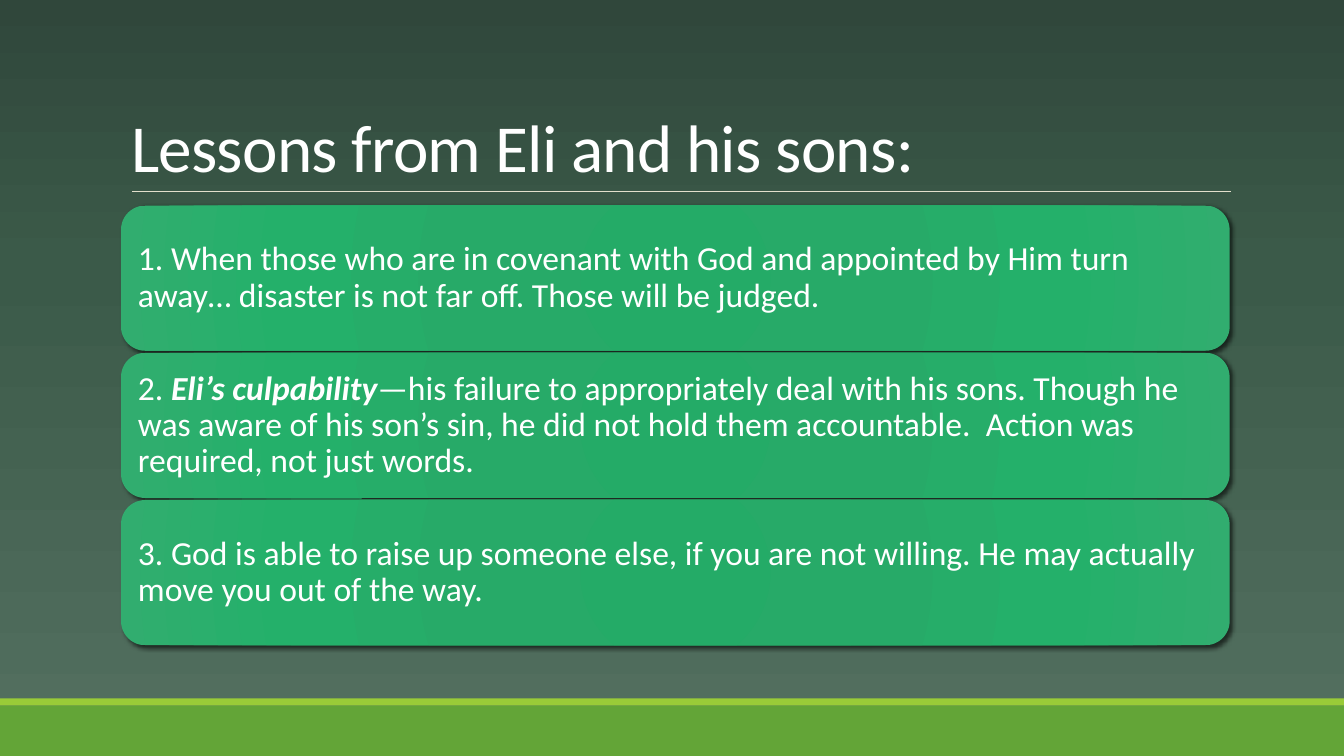
from lxml import etree
from pptx import Presentation
from pptx.dml.color import RGBColor
from pptx.enum.shapes import MSO_CONNECTOR, MSO_SHAPE
from pptx.enum.text import MSO_ANCHOR, MSO_AUTO_SIZE, PP_ALIGN
from pptx.oxml.ns import qn
from pptx.util import Cm, Pt

BAR, CARD = MSO_SHAPE.RECTANGLE, MSO_SHAPE.ROUNDED_RECTANGLE
STRAIGHT = MSO_CONNECTOR.STRAIGHT
MIDDLE, BOTTOM = MSO_ANCHOR.MIDDLE, MSO_ANCHOR.BOTTOM
LEFT, NO_FIT = PP_ALIGN.LEFT, MSO_AUTO_SIZE.NONE

WHITE = RGBColor(0xFF, 0xFF, 0xFF)
BLACK = RGBColor(0x00, 0x00, 0x00)
CREAM = RGBColor(0xE2, 0xDF, 0xCC)
LIME = RGBColor(0x99, 0xCB, 0x38)
GRASS = RGBColor(0x63, 0xA5, 0x37)
BACKDROP = [(0, RGBColor(0x54, 0x70, 0x60)), (65, RGBColor(0x3B, 0x5A, 0x49)),
            (100, RGBColor(0x30, 0x47, 0x3B))]
EMERALD = [(0, RGBColor(0x24, 0xAB, 0x67)), (34, RGBColor(0x27, 0xAA, 0x68)),
           (70, RGBColor(0x24, 0xB0, 0x6A)), (100, RGBColor(0x31, 0xAD, 0x6F))]

WIDTH, HEIGHT = 33.87, 19.05
CARD_LEFT, CARD_TOP, CARD_WIDTH, CARD_HEIGHT, CARD_PITCH = 3.05, 5.18, 27.94, 3.66, 3.71

LESSONS = [
    [("1. When those who are in covenant with God and appointed by Him turn away… "
      "disaster is not far off. Those will be judged.", False)],
    [("2. ", False), ("Eli’s culpability", True),
     ("—his failure to appropriately deal with his sons. Though he was aware of his "
      "son’s sin, he did not hold them accountable.  Action was required, "
      "not just words.", False)],
    [("3. God is able to raise up someone else, if you are not willing. "
      "He may actually move you out of the way.", False)],
]


def add_xml(parent, tag, **attributes):
    """Append a child element with the given attributes and return it."""
    values = {name: str(value) for name, value in attributes.items()}
    return etree.SubElement(parent, qn(tag), values)


class LessonSlide:
    """Holds the slide and its style, and adds each kind of element."""

    font = "Calibri"

    def __init__(self, deck):
        """Add a title-only slide to the deck."""
        self.slide = deck.slides.add_slide(deck.slide_layouts[5])

    def gradient(self, owner, stops):
        """Write the colour stops into the owner's gradient and return it."""
        gradient = next(owner.iter(qn("a:gradFill")))
        gradient.clear()
        stop_list = add_xml(gradient, "a:gsLst")
        for percent, color in stops:
            stop = add_xml(stop_list, "a:gs", pos=percent * 1000)
            add_xml(stop, "a:srgbClr", val=color)
        return gradient

    def background(self, stops):
        """Fill the background with a gradient rising from the bottom."""
        self.slide.background.fill.gradient()
        gradient = self.gradient(self.slide.element, stops)
        add_xml(gradient, "a:lin", ang=270 * 60000, scaled=0)

    def format_run(self, run, size, emphasis=False):
        """Apply the slide's font to a run."""
        run.font.name, run.font.size = self.font, Pt(size)
        run.font.color.rgb = WHITE
        run.font.bold = run.font.italic = emphasis

    def title(self, text, left, top, width, height):
        """Place and format the title placeholder."""
        heading = self.slide.shapes.title
        heading.left, heading.top = Cm(left), Cm(top)
        heading.width, heading.height = Cm(width), Cm(height)
        frame = heading.text_frame
        frame.text = text
        frame.auto_size, frame.vertical_anchor = NO_FIT, BOTTOM
        paragraph = frame.paragraphs[0]
        paragraph.alignment, paragraph.line_spacing = LEFT, 0.85
        run = paragraph.runs[0]
        self.format_run(run, 48)
        run.font._element.set("spc", "-50")

    def rule(self, left, right, y, color):
        """Draw a thin horizontal line."""
        line = self.slide.shapes.add_connector(STRAIGHT, Cm(left), Cm(y), Cm(right), Cm(y))
        line.line.color.rgb, line.line.width = color, Pt(0.5)
        add_xml(line.element.spPr, "a:effectLst")

    def shape(self, kind, left, top, width, height):
        """Add a preset shape without outline or inherited shadow."""
        shape = self.slide.shapes.add_shape(kind, Cm(left), Cm(top), Cm(width), Cm(height))
        shape.shadow.inherit = False
        shape.line.fill.background()
        return shape

    def band(self, top, height, color):
        """Add a solid band across the whole slide."""
        band = self.shape(BAR, 0, top, WIDTH, height)
        band.fill.solid()
        band.fill.fore_color.rgb = color

    def card(self, pieces, top):
        """Add a rounded gradient card holding one lesson."""
        card = self.shape(CARD, CARD_LEFT, top, CARD_WIDTH, CARD_HEIGHT)
        card.fill.gradient()
        glow = add_xml(self.gradient(card.element, EMERALD), "a:path", path="circle")
        add_xml(glow, "a:fillToRect", l=100000, t=100000, r=100000, b=100000)
        effects = card.element.spPr.find(qn("a:effectLst"))
        shadow = add_xml(effects, "a:outerShdw", blurRad=Pt(3.5), dist=Pt(2),
                         dir=45 * 60000, algn="tl", rotWithShape=0)
        add_xml(add_xml(shadow, "a:srgbClr", val=BLACK), "a:alpha", val=60000)
        frame = card.text_frame
        frame.word_wrap, frame.vertical_anchor = True, MIDDLE
        frame.margin_left = frame.margin_right = Cm(0.25)
        frame.margin_top = frame.margin_bottom = Cm(0.25)
        paragraph = frame.paragraphs[0]
        paragraph.alignment, paragraph.line_spacing = LEFT, 0.9
        for text, emphasis in pieces:
            run = paragraph.add_run()
            run.text = text
            self.format_run(run, 24, emphasis)


def main():
    """Build the slide and save it."""
    deck = Presentation()
    deck.slide_width, deck.slide_height = Cm(WIDTH), Cm(HEIGHT)
    page = LessonSlide(deck)
    page.background(BACKDROP)
    page.rule(3.33, 31.01, 4.83, CREAM)
    page.title("Lessons from Eli and his sons:", CARD_LEFT, 0.79, CARD_WIDTH, 4.04)
    page.band(17.6, 0.18, LIME)
    page.band(17.78, 1.27, GRASS)
    for index, lesson in enumerate(LESSONS):
        page.card(lesson, CARD_TOP + index * CARD_PITCH)
    deck.save("out.pptx")


if __name__ == "__main__":
    main()
